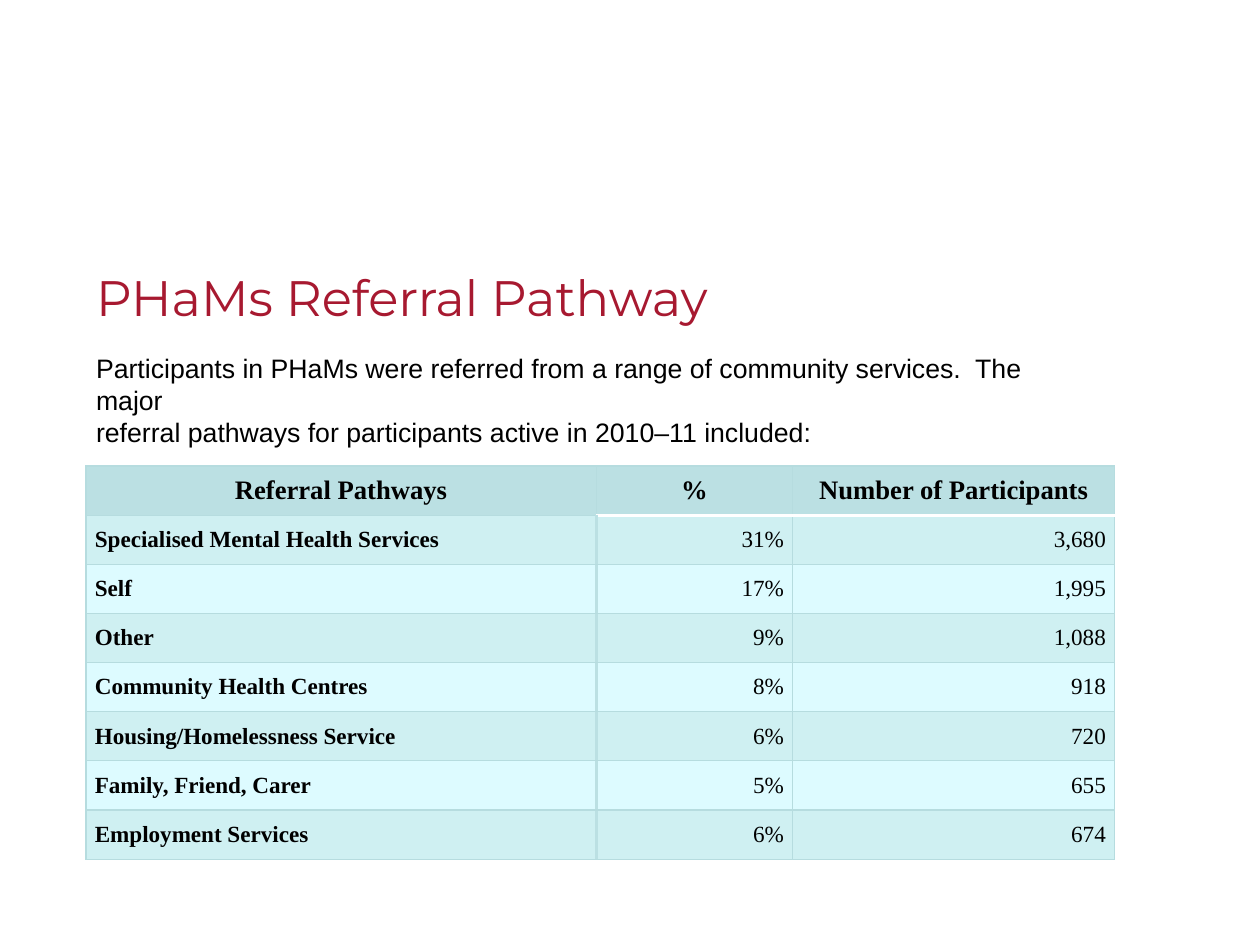
from lxml.etree import SubElement
from pptx import Presentation
from pptx.dml.color import RGBColor
from pptx.enum.text import MSO_ANCHOR, MSO_AUTO_SIZE, PP_ALIGN
from pptx.oxml.ns import qn
from pptx.util import Emu, Inches, Pt

COLORS = {
    "title": "A71930",
    "text": "000000",
    "header": "BBE0E3",
    "odd_row": "CFF0F2",
    "even_row": "DDFBFF",
    "grid": "B6DCDF",
    "header_rule": "FFFFFF",
}
SLIDE_WIDTH, SLIDE_HEIGHT = Inches(9.84), Inches(7.28)
INTRO = (
    "Participants in PHaMs were referred from a range of community services.  The major\v"
    "referral pathways for participants active in 2010–11 included:"
)
HEADINGS = ("Referral Pathways", "%", "Number of Participants")
REFERRALS = (
    ("Specialised Mental Health Services", "31%", "3,680"),
    ("Self", "17%", "1,995"),
    ("Other", "9%", "1,088"),
    ("Community Health Centres", "8%", "918"),
    ("Housing/Homelessness Service", "6%", "720"),
    ("Family, Friend, Carer", "5%", "655"),
    ("Employment Services", "6%", "674"),
)
COLUMN_PERCENTS = (49.6, 19.1, 31.3)


def percent_area(left, top, width, height):
    return [
        Emu(round(side * percent / 100))
        for side, percent in zip(
            (SLIDE_WIDTH, SLIDE_HEIGHT) * 2, (left, top, width, height)
        )
    ]


def remove_bullet(paragraph):
    properties = paragraph._p.get_or_add_pPr()
    properties.set("marL", "0")
    properties.set("indent", "0")
    SubElement(properties, qn("a:buNone"))


def write_text(frame, text, *, font, size, color="text", bold=False,
               align=PP_ALIGN.LEFT, line_spacing=None):
    frame.text = text
    paragraph = frame.paragraphs[0]
    remove_bullet(paragraph)
    paragraph.alignment = align
    paragraph.space_before = Pt(0)
    paragraph.line_spacing = line_spacing
    for run in paragraph.runs:
        run.font.name = font
        run.font.size = Pt(size)
        run.font.bold = bold
        run.font.color.rgb = RGBColor.from_string(COLORS[color])


def fill_placeholder(placeholder, area, text, **text_format):
    placeholder.left, placeholder.top, placeholder.width, placeholder.height = area
    frame = placeholder.text_frame
    frame.margin_left = frame.margin_top = frame.margin_right = frame.margin_bottom = 0
    frame.word_wrap = True
    frame.auto_size = MSO_AUTO_SIZE.NONE
    frame.vertical_anchor = MSO_ANCHOR.TOP
    write_text(frame, text, **text_format)


def set_borders(cell, borders):
    properties = cell._tc.get_or_add_tcPr()
    for position, side in enumerate("LRTB"):
        color, width = borders.get(side, ("grid", 0.75))
        border = properties.makeelement(qn(f"a:ln{side}"), {"w": str(Pt(width))})
        fill = SubElement(border, qn("a:solidFill"))
        SubElement(fill, qn("a:srgbClr"), val=COLORS[color])
        properties.insert(position, border)


def fill_cell(cell, text, fill, borders, **text_format):
    cell.margin_left = cell.margin_right = Inches(0.07)
    cell.margin_top = cell.margin_bottom = 0
    cell.vertical_anchor = MSO_ANCHOR.MIDDLE
    cell.fill.solid()
    cell.fill.fore_color.rgb = RGBColor.from_string(COLORS[fill])
    write_text(cell.text_frame, text, font="Times New Roman", **text_format)
    set_borders(cell, borders)


def add_referral_table(slide, area):
    row_count = len(REFERRALS) + 1
    table = slide.shapes.add_table(row_count, len(HEADINGS), *area).table
    for column, percent in zip(table.columns, COLUMN_PERCENTS):
        column.width = Emu(round(area[2] * percent / 100))
    for row in table.rows:
        row.height = Emu(area[3] // row_count)

    header_rule, pathway_rule = ("header_rule", 2), ("header", 2)
    for index, heading in enumerate(HEADINGS):
        fill_cell(table.cell(0, index), heading, "header",
                  {"B": header_rule} if index else {},
                  size=15, bold=True, align=PP_ALIGN.CENTER)

    for row_index, referral in enumerate(REFERRALS, start=1):
        fill = "odd_row" if row_index % 2 else "even_row"
        for index, value in enumerate(referral):
            borders = {}
            if index == 0:
                borders["R"] = pathway_rule
            if index == 1:
                borders["L"] = pathway_rule
            if index and row_index == 1:
                borders["T"] = header_rule
            fill_cell(table.cell(row_index, index), value, fill, borders,
                      size=13, bold=index == 0,
                      align=PP_ALIGN.RIGHT if index else PP_ALIGN.LEFT)


def main():
    presentation = Presentation()
    presentation.slide_width, presentation.slide_height = SLIDE_WIDTH, SLIDE_HEIGHT
    slide = presentation.slides.add_slide(presentation.slide_layouts[1])
    fill_placeholder(slide.shapes.title, percent_area(7.62, 28.57, 73.7, 6.9),
                     "PHaMs Referral Pathway",
                     font="Montserrat", size=28, color="title")
    fill_placeholder(slide.placeholders[1], percent_area(7.62, 37.8, 73.7, 10.3),
                     INTRO, font="Arial", size=15, line_spacing=Pt(18))
    add_referral_table(slide, percent_area(6.82, 50, 81.65, 42.2))
    presentation.save("out.pptx")


if __name__ == "__main__":
    main()
